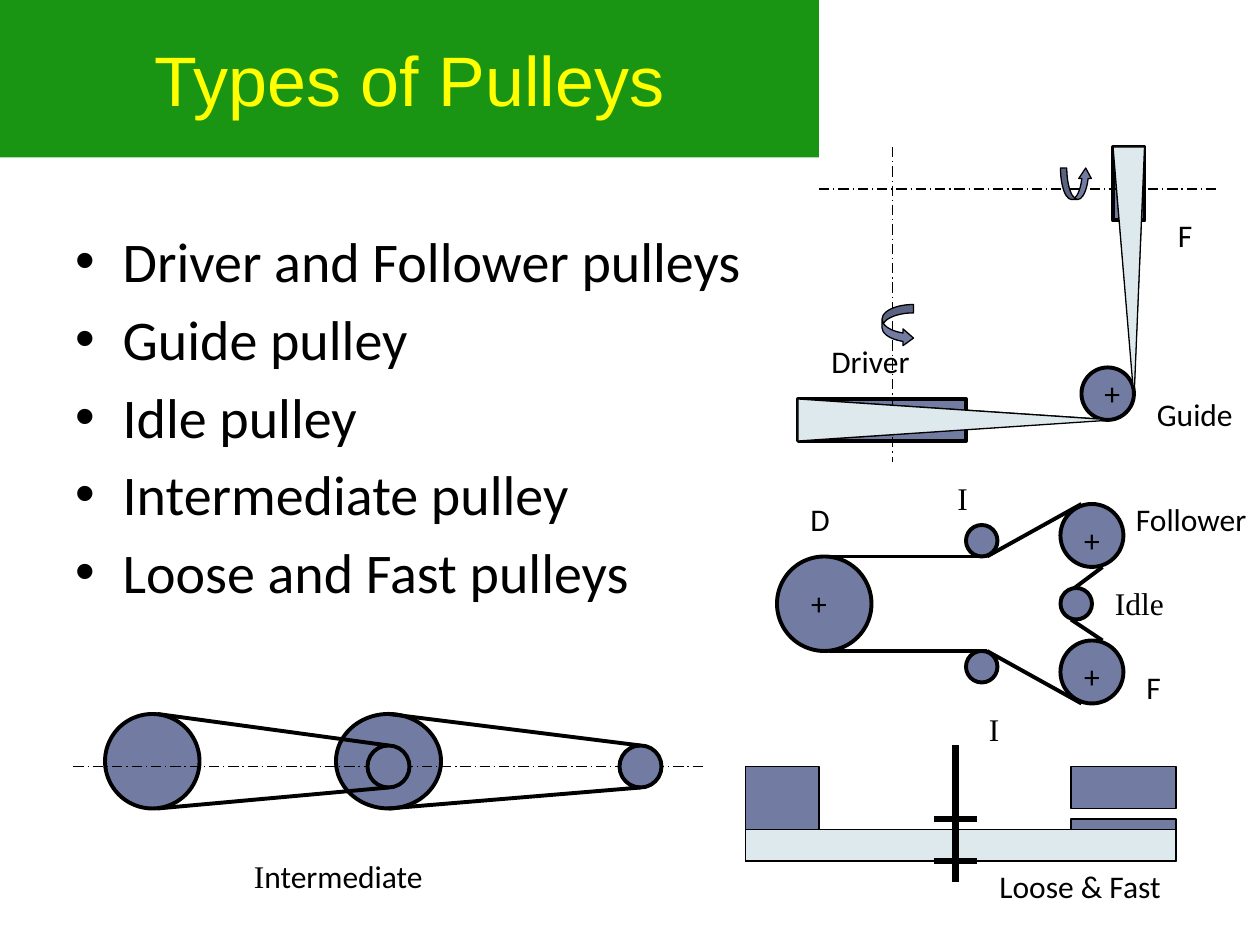
"""Build the "Types of Pulleys" slide with its four belt drive diagrams."""
from dataclasses import dataclass
from typing import Optional

from lxml import etree
from pptx import Presentation
from pptx.dml.color import RGBColor
from pptx.enum.dml import MSO_LINE
from pptx.enum.shapes import MSO_CONNECTOR, MSO_SHAPE
from pptx.enum.text import MSO_ANCHOR, MSO_AUTO_SIZE, PP_ALIGN
from pptx.oxml.ns import qn
from pptx.util import Pt

PX = 914400 // 120
GREEN = RGBColor(0x19, 0x95, 0x13)
YELLOW = RGBColor(0xFF, 0xFF, 0x00)
BLACK = RGBColor(0x00, 0x00, 0x00)
STEEL = RGBColor(0x72, 0x7C, 0xA3)
BELT = RGBColor(0xDD, 0xE9, 0xEC)
SANS = "Calibri"
SERIF = "Times New Roman"
RECTANGLE = MSO_SHAPE.RECTANGLE
CIRCLE = MSO_SHAPE.OVAL
TURN_RIGHT = MSO_SHAPE.CURVED_RIGHT_ARROW
TURN_UP = MSO_SHAPE.CURVED_UP_ARROW
STRAIGHT = MSO_CONNECTOR.STRAIGHT
AXIS_DASH = MSO_LINE.LONG_DASH_DOT
CENTER = PP_ALIGN.CENTER
LEFT = PP_ALIGN.LEFT
MIDDLE = MSO_ANCHOR.MIDDLE
GROW = MSO_AUTO_SIZE.SHAPE_TO_FIT_TEXT
THIN, THICK, BRACKET, SHAFT = 0.75, 2.25, 3, 4.5
LABEL_HEIGHT = 48


@dataclass
class Part:
    left: int
    top: int
    width: int
    height: int
    kind: MSO_SHAPE = CIRCLE
    weight: float = THICK
    adjustments: tuple[float, ...] = ()


@dataclass
class Line:
    x1: int
    y1: int
    x2: int
    y2: int
    weight: float = THICK
    dash: Optional[MSO_LINE] = None


@dataclass
class Label:
    text: str
    left: int
    top: int
    width: int
    font: str = SANS
    align: PP_ALIGN = LEFT


def add_run(paragraph, text: str, size: int, font: str, color: RGBColor = BLACK) -> None:
    run = paragraph.add_run()
    run.text = text
    run.font.size = Pt(size)
    run.font.name = font
    run.font.color.rgb = color


def style_shape(shape, fill: RGBColor, weight: float) -> None:
    shape.shadow.inherit = False
    shape.fill.solid()
    shape.fill.fore_color.rgb = fill
    shape.line.color.rgb = BLACK
    shape.line.width = Pt(weight)


def add_parts(slide, parts: list[Part]) -> None:
    for part in parts:
        shape = slide.shapes.add_shape(
            part.kind, part.left * PX, part.top * PX, part.width * PX, part.height * PX)
        style_shape(shape, STEEL, part.weight)
        for index, value in enumerate(part.adjustments):
            shape.adjustments[index] = value


def add_lines(slide, lines: list[Line]) -> None:
    for line in lines:
        connector = slide.shapes.add_connector(
            STRAIGHT, line.x1 * PX, line.y1 * PX, line.x2 * PX, line.y2 * PX)
        connector.line.color.rgb = BLACK
        connector.line.width = Pt(line.weight)
        if line.dash is not None:
            connector.line.dash_style = line.dash
        properties = connector._element.find(qn("p:spPr"))
        etree.SubElement(properties, qn("a:effectLst"))


def add_belt(slide, points: list[tuple[int, int]]) -> None:
    builder = slide.shapes.build_freeform(*points[0], scale=PX)
    builder.add_line_segments(points[1:], close=True)
    style_shape(builder.convert_to_shape(), BELT, THIN)


def add_labels(slide, labels: list[Label]) -> None:
    for label in labels:
        box = slide.shapes.add_textbox(
            label.left * PX, label.top * PX, label.width * PX, LABEL_HEIGHT * PX)
        box.text_frame.word_wrap = True
        box.text_frame.auto_size = GROW
        paragraph = box.text_frame.paragraphs[0]
        paragraph.alignment = label.align
        if label.text == "Intermediate":
            add_run(paragraph, label.text[:1], 18, SERIF)
            add_run(paragraph, label.text[1:], 18, SANS)
        else:
            add_run(paragraph, label.text, 18, label.font)


def add_title(slide) -> None:
    banner = slide.shapes.add_shape(RECTANGLE, 0, 0, 780 * PX, 150 * PX)
    style_shape(banner, GREEN, THIN)
    banner.line.fill.background()
    banner.text_frame.vertical_anchor = MIDDLE
    paragraph = banner.text_frame.paragraphs[0]
    paragraph.alignment = CENTER
    add_run(paragraph, "Types of Pulleys", 40, "Arial", YELLOW)


def add_bullets(slide, items: list[str]) -> None:
    box = slide.shapes.add_textbox(60 * PX, 210 * PX, 1080 * PX, 594 * PX)
    frame = box.text_frame
    frame.word_wrap = True
    for index, item in enumerate(items):
        paragraph = frame.add_paragraph() if index else frame.paragraphs[0]
        properties = paragraph._p.get_or_add_pPr()
        properties.set("marL", str(45 * PX))
        properties.set("indent", str(-45 * PX))
        etree.SubElement(properties, qn("a:buFont"), typeface="Arial")
        etree.SubElement(properties, qn("a:buChar"), char="•")
        if index:
            paragraph.space_before = Pt(6)
        add_run(paragraph, item, 32, SANS)


def add_guide_drive(slide) -> None:
    add_parts(slide, [Part(760, 380, 160, 40, RECTANGLE), Part(1060, 140, 30, 70, RECTANGLE)])
    add_lines(slide, [Line(780, 180, 1160, 180, THIN, AXIS_DASH),
                      Line(850, 140, 850, 440, THIN, AXIS_DASH)])
    add_parts(slide, [Part(1030, 350, 50, 50)])
    add_lines(slide, [Line(760, 380, 1060, 400, THIN), Line(760, 420, 1050, 400, THIN),
                      Line(1060, 140, 1080, 370, THIN), Line(1090, 140, 1080, 370, THIN)])
    add_belt(slide, [(760, 380), (760, 420), (1060, 400)])
    add_belt(slide, [(1060, 140), (1080, 380), (1090, 140)])
    add_labels(slide, [Label("+", 1040, 350, 30), Label("F", 1110, 200, 50),
                       Label("Driver", 780, 320, 150), Label("Guide", 1090, 370, 110)])
    add_parts(slide, [Part(840, 290, 30, 40, TURN_RIGHT, THIN, (0.267, 0.533, 0.333)),
                      Part(1010, 160, 30, 30, TURN_UP, THIN, (0.2, 0.4, 0.333))])


def add_idle_drive(slide) -> None:
    add_parts(slide, [Part(740, 530, 90, 90), Part(1010, 480, 60, 60), Part(1010, 610, 60, 60)])
    add_lines(slide, [Line(790, 530, 940, 530), Line(790, 620, 940, 620),
                      Line(1050, 610, 1020, 590), Line(1030, 670, 940, 620),
                      Line(1030, 480, 940, 530), Line(1050, 540, 1010, 570)])
    add_parts(slide, [Part(left, top, 30, 30) for left, top in ((920, 500), (920, 620), (1010, 560))])
    add_labels(slide, [Label("I", 930, 670, 50, SERIF), Label("D", 760, 470, 50),
                       Label("Idle", 1050, 550, 120, SERIF), Label("I", 900, 450, 50, SERIF),
                       Label("F", 1080, 630, 50), Label("Follower", 1070, 470, 160)])
    add_labels(slide, [Label("+", left, top, 40, align=CENTER)
                       for left, top in ((760, 550), (1020, 620), (1020, 490))])


def add_intermediate_drive(slide) -> None:
    add_parts(slide, [Part(100, 680, 90, 90), Part(320, 680, 100, 90)])
    add_lines(slide, [Line(70, 730, 670, 730, THIN, AXIS_DASH)])
    add_parts(slide, [Part(350, 710, 40, 40), Part(590, 710, 40, 40)])
    for start, end in ((150, 370), (370, 610)):
        add_lines(slide, [Line(start, 680, end, 710), Line(start, 770, end, 750)])
    add_labels(slide, [Label("Intermediate", 230, 810, 220)])


def add_loose_and_fast_drive(slide) -> None:
    add_parts(slide, [Part(710, 730, 70, 90, RECTANGLE, THIN),
                      Part(1020, 780, 100, 40, RECTANGLE, THIN),
                      Part(1020, 730, 100, 40, RECTANGLE, THIN)])
    add_belt(slide, [(1120, 790), (1120, 820), (710, 820), (710, 790)])
    add_lines(slide, [Line(910, 710, 910, 840, SHAFT), Line(890, 820, 930, 820, BRACKET),
                      Line(890, 780, 930, 780, BRACKET)])
    add_labels(slide, [Label("Loose & Fast", 940, 820, 230)])


def main() -> None:
    presentation = Presentation()
    presentation.slide_width = 1200 * PX
    presentation.slide_height = 900 * PX
    slide = presentation.slides.add_slide(presentation.slide_layouts[6])
    add_title(slide)
    add_bullets(slide, ["Driver and Follower pulleys", "Guide pulley", "Idle pulley",
                        "Intermediate pulley", "Loose and Fast pulleys"])
    add_guide_drive(slide)
    add_idle_drive(slide)
    add_intermediate_drive(slide)
    add_loose_and_fast_drive(slide)
    presentation.save("out.pptx")


if __name__ == "__main__":
    main()
